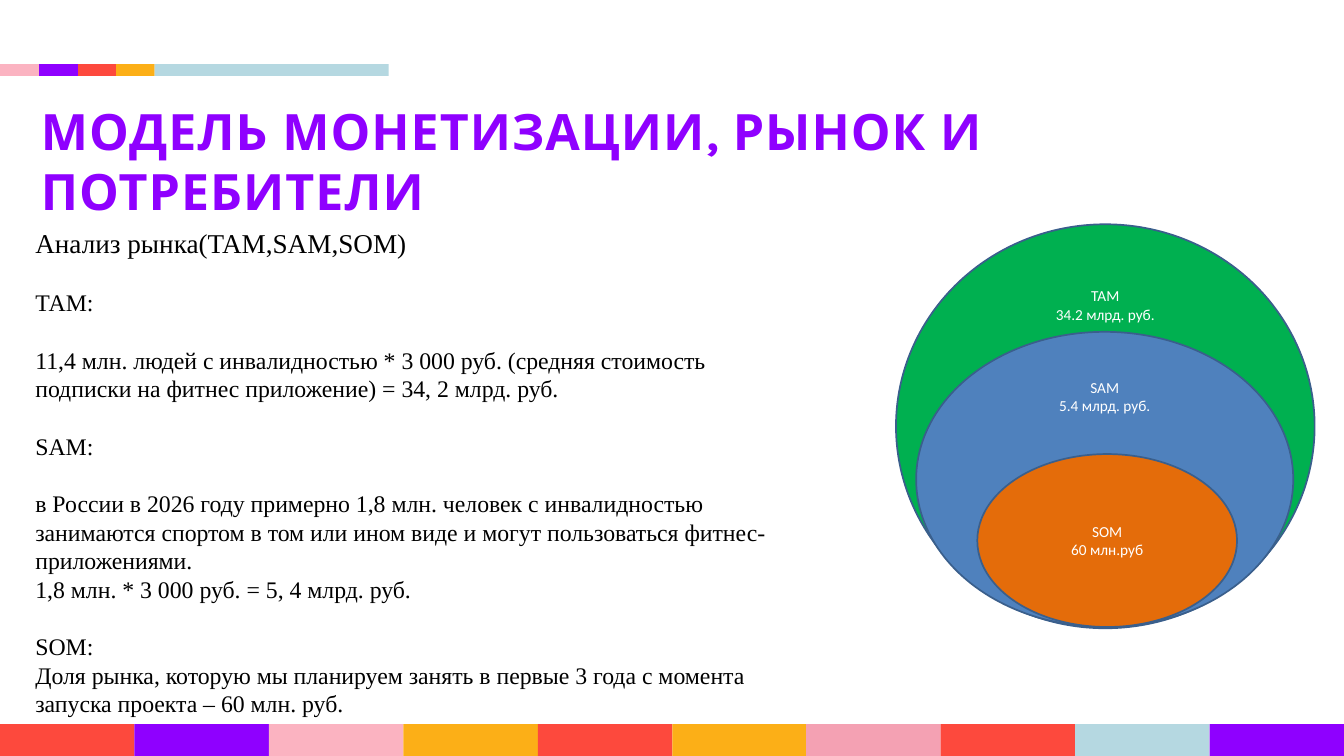
"""Build the market model slide with nested TAM, SAM and SOM ellipses."""
from dataclasses import dataclass
from itertools import accumulate, pairwise

from pptx import Presentation
from pptx.dml.color import RGBColor
from pptx.enum.shapes import MSO_SHAPE
from pptx.enum.text import MSO_ANCHOR, PP_ALIGN
from pptx.shapes.autoshape import Shape
from pptx.slide import Slide
from pptx.text.text import _Paragraph
from pptx.util import Pt

PX = 9144
WIDTH, HEIGHT = 2199, 1237


@dataclass(frozen=True)
class Theme:
    red: str = "FD493D"
    violet: str = "8F00FF"
    pink: str = "FBB3C1"
    rose: str = "F4A1B3"
    amber: str = "FCAF17"
    sky: str = "B5D8E1"
    green: str = "00B050"
    blue: str = "4F81BD"
    orange: str = "E46C0A"
    outline: str = "3A5F8C"
    black: str = "000000"
    white: str = "FFFFFF"
    title_font: str = "Karla"
    body_font: str = "Times New Roman"
    label_font: str = "Calibri"
    title_size: int = 59
    heading_size: int = 32
    body_size: int = 28
    label_size: int = 18


THEME = Theme()


@dataclass(frozen=True)
class Box:
    left: int
    top: int
    width: int
    height: int

    def emu(self) -> tuple[int, ...]:
        return tuple(v * PX for v in (self.left, self.top, self.width, self.height))


@dataclass(frozen=True)
class Market:
    box: Box
    fill: str
    lines: tuple[str, str]
    anchor: MSO_ANCHOR = MSO_ANCHOR.TOP


@dataclass(frozen=True)
class BodyLine:
    text: str
    size: int = THEME.body_size
    gap: int = 34


MARKETS = (
    Market(Box(1466, 367, 685, 661), THEME.green, ("TAM", "34.2 млрд. руб.")),
    Market(Box(1499, 543, 617, 483), THEME.blue, ("SAM", "5.4 млрд. руб.")),
    Market(Box(1599, 743, 425, 283), THEME.orange, ("SOM", "60 млн.руб"), MSO_ANCHOR.MIDDLE),
)
BODY = (
    BodyLine("Анализ рынка(TAM,SAM,SOM)", THEME.heading_size, 0),
    BodyLine("ТАМ:"),
    BodyLine("11,4 млн. людей с инвалидностью * 3 000 руб. (средняя стоимость "
             "подписки на фитнес приложение) = 34, 2 млрд. руб."),
    BodyLine("SAM:"),
    BodyLine("в России в 2026 году примерно 1,8 млн. человек с инвалидностью занимаются "
             "спортом в том или ином виде и могут пользоваться фитнес-приложениями."),
    BodyLine("1,8 млн. * 3 000 руб. = 5, 4 млрд. руб.", gap=0),
    BodyLine("SOM:"),
    BodyLine("Доля рынка, которую мы планируем занять в первые 3 года с момента "
             "запуска проекта – 60 млн. руб.", gap=0),
)
TOP_COLORS = (THEME.pink, THEME.violet, THEME.red, THEME.amber, THEME.sky)
TOP_EDGES = tuple(accumulate((0, 64, 64, 62, 63, 383)))
BOTTOM_COLORS = (THEME.red, THEME.violet, THEME.pink, THEME.amber, THEME.red,
                 THEME.amber, THEME.rose, THEME.red, THEME.sky, THEME.violet)
BOTTOM_EDGES = tuple(round(i * WIDTH / 10) for i in range(11))


def set_font(p: _Paragraph, name: str, size: int, color: str) -> None:
    p.font.name = name
    p.font.size = Pt(size)
    p.font.color.rgb = RGBColor.from_string(color)


def add_filled(s: Slide, kind: MSO_SHAPE, box: Box, fill: str) -> Shape:
    sp = s.shapes.add_shape(kind, *box.emu())
    sp.shadow.inherit = False
    sp.fill.solid()
    sp.fill.fore_color.rgb = RGBColor.from_string(fill)
    sp.line.fill.background()
    return sp


def add_stripe(s: Slide, top: int, height: int, edges: tuple[int, ...],
               colors: tuple[str, ...]) -> None:
    for (left, right), color in zip(pairwise(edges), colors):
        add_filled(s, MSO_SHAPE.RECTANGLE, Box(left, top, right - left, height), color)


def add_title(s: Slide) -> None:
    tf = s.shapes.add_textbox(*Box(63, 162, 2054, 200).emu()).text_frame
    tf.word_wrap = True
    tf.margin_left = tf.margin_right = tf.margin_bottom = 4 * PX
    tf.margin_top = 2 * PX
    p = tf.paragraphs[0]
    set_font(p, THEME.title_font, THEME.title_size, THEME.violet)
    p.font.bold = True
    r = p.add_run()
    r.text = "МОДЕЛЬ МОНЕТИЗАЦИИ, РЫНОК И ПОТРЕБИТЕЛИ"
    r._r.get_or_add_rPr().set("spc", "120")


def add_body(s: Slide) -> None:
    tf = s.shapes.add_textbox(*Box(48, 366, 1225, 819).emu()).text_frame
    tf.word_wrap = True
    for i, line in enumerate(BODY):
        p = tf.add_paragraph() if i else tf.paragraphs[0]
        p.text = line.text
        if line.gap:
            p.space_before = Pt(line.gap)
        set_font(p, THEME.body_font, line.size, THEME.black)


def add_market(s: Slide, market: Market) -> None:
    sp = add_filled(s, MSO_SHAPE.OVAL, market.box, market.fill)
    sp.line.color.rgb = RGBColor.from_string(THEME.outline)
    sp.line.width = Pt(2)
    tf = sp.text_frame
    tf.vertical_anchor = market.anchor
    tf.text = "\n".join(market.lines)
    for p in tf.paragraphs:
        p.alignment = PP_ALIGN.CENTER
        set_font(p, THEME.label_font, THEME.label_size, THEME.white)


def main() -> None:
    prs = Presentation()
    prs.slide_width, prs.slide_height = WIDTH * PX, HEIGHT * PX
    s = prs.slides.add_slide(prs.slide_layouts[6])
    add_stripe(s, 105, 19, TOP_EDGES, TOP_COLORS)
    add_stripe(s, 1185, 52, BOTTOM_EDGES, BOTTOM_COLORS)
    add_title(s)
    add_body(s)
    for market in MARKETS:
        add_market(s, market)
    prs.save("out.pptx")


if __name__ == "__main__":
    main()
